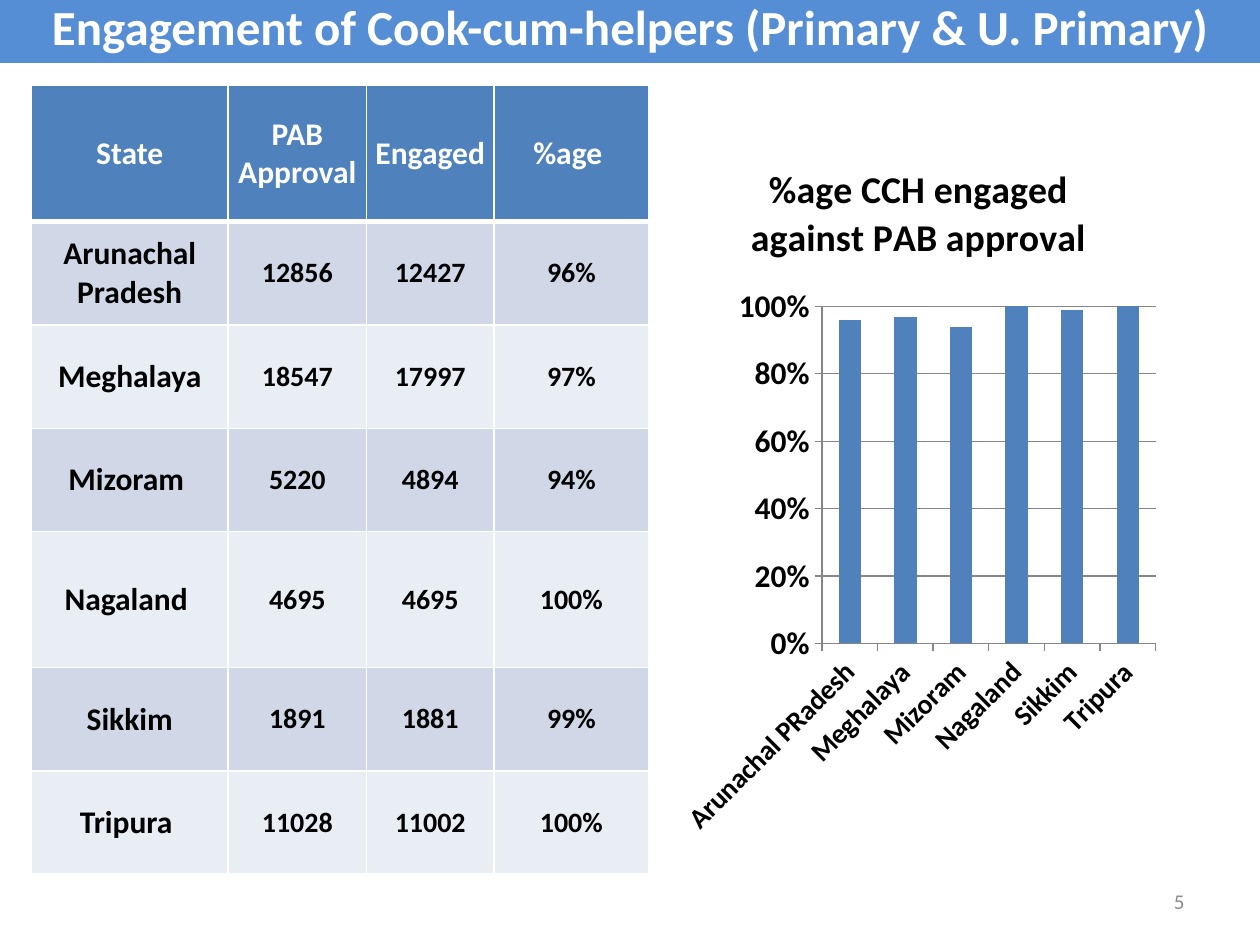
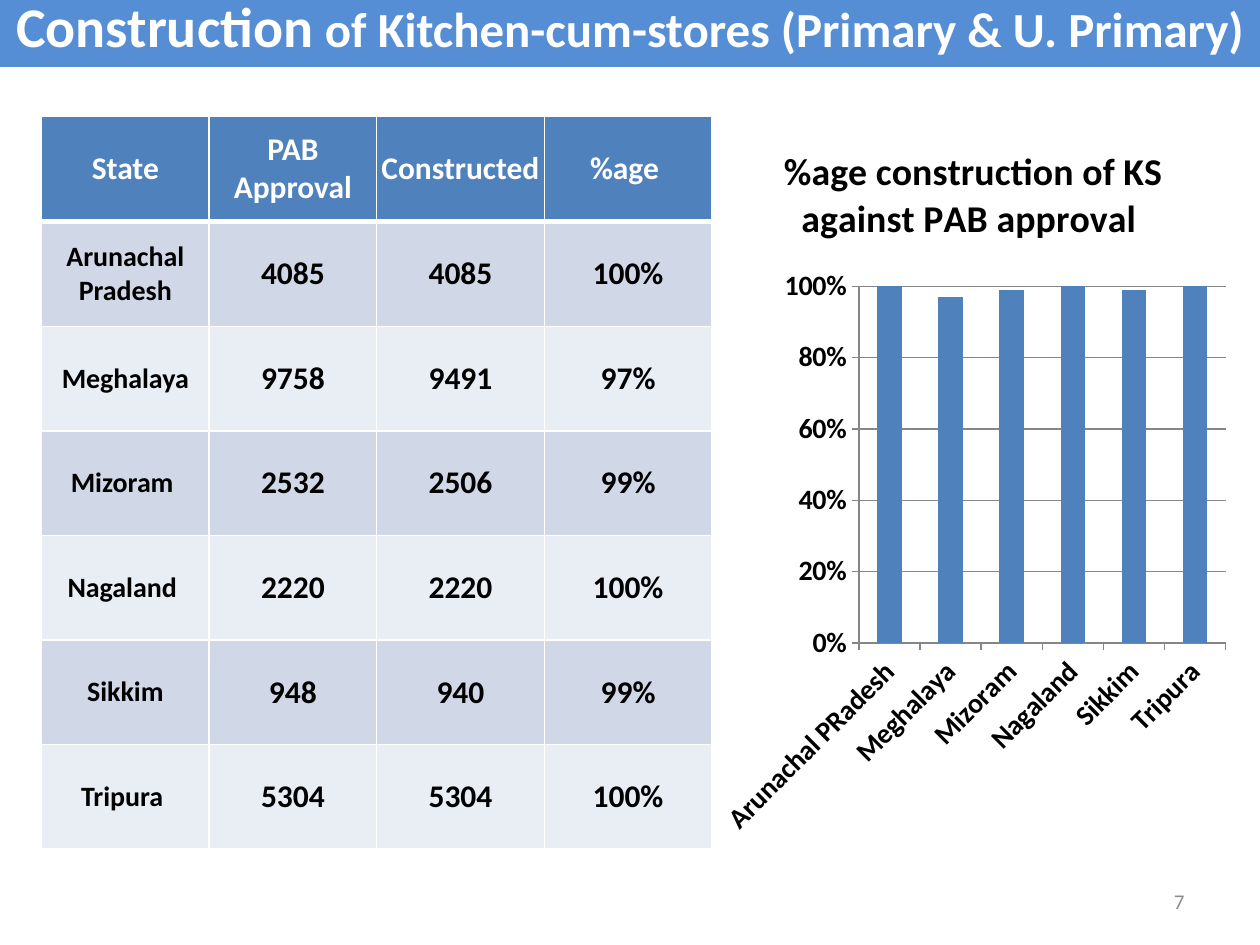
from dataclasses import dataclass

from lxml.etree import SubElement
from pptx import Presentation
from pptx.chart.data import CategoryChartData
from pptx.dml.color import RGBColor
from pptx.enum.chart import XL_CHART_TYPE as ChartType, XL_TICK_MARK as TickMark
from pptx.enum.shapes import MSO_SHAPE as Shape
from pptx.enum.text import MSO_ANCHOR as Anchor, MSO_AUTO_SIZE as AutoSize, PP_ALIGN as Align
from pptx.oxml.ns import qn
from pptx.util import Inches, Pt


@dataclass(frozen=True)
class Theme:
    font: str = "Calibri"
    band: str = "558ED5"
    accent: str = "4F81BD"
    row_fills: tuple = ("D0D8E8", "E9EDF4")
    white: str = "FFFFFF"
    black: str = "000000"
    grid: str = "868686"
    muted: str = "8C8C8C"
    big_title: float = 32
    title: float = 28
    chart_title: float = 21.6
    large: float = 18
    medium: float = 16
    page: float = 12


THEME = Theme()
STATES = ["Arunachal Pradesh", "Meghalaya", "Mizoram ", "Nagaland ", "Sikkim", "Tripura "]
CHART_STATES = ["Arunachal PRadesh"] + [state.strip() for state in STATES[1:]]


def rgb(color):
    return RGBColor.from_string(color)


def write(frame, text, size=THEME.large, color=THEME.black, bold=True,
          align=Align.CENTER, spacing=None):
    """Fill the first paragraph; text is a string or a list of (text, size) runs."""
    paragraph = frame.paragraphs[0]
    paragraph.alignment = align
    if spacing:
        paragraph.line_spacing = spacing
    for words, points in [(text, size)] if isinstance(text, str) else text:
        run = paragraph.add_run()
        run.text = words
        style_font(run.font, points, color, bold)


def style_font(font, size, color=THEME.black, bold=True):
    font.name, font.size, font.bold = THEME.font, Pt(size), bold
    font.color.rgb = rgb(color)


def add_title_band(slide, runs, top, height):
    band = slide.shapes.add_shape(Shape.RECTANGLE, 0, Inches(top), Inches(10), Inches(height))
    band.shadow.inherit = False
    band.fill.solid()
    band.fill.fore_color.rgb = rgb(THEME.band)
    band.line.fill.background()
    frame = band.text_frame
    frame.word_wrap = True
    frame.auto_size = AutoSize.SHAPE_TO_FIT_TEXT
    frame.vertical_anchor = Anchor.MIDDLE
    write(frame, runs, color=THEME.white, spacing=0.9)


def set_borders(cell, bottom):
    properties = cell._tc.get_or_add_tcPr()
    for side, points in (("L", 1), ("R", 1), ("T", 1), ("B", bottom)):
        line = SubElement(properties, qn(f"a:ln{side}"), w=str(Pt(points)))
        SubElement(SubElement(line, qn("a:solidFill")), qn("a:srgbClr"), val=THEME.white)


def fill_cell(cell, text, fill, size, color=THEME.black, bottom=1):
    cell.margin_left = cell.margin_right = cell.margin_top = cell.margin_bottom = 0
    cell.vertical_anchor = Anchor.MIDDLE
    set_borders(cell, bottom)
    cell.fill.solid()
    cell.fill.fore_color.rgb = rgb(fill)
    write(cell.text_frame, text, size, color)


def add_state_table(slide, left, top, widths, heights, done_label, counts, shares,
                    state_size, number_size):
    table = slide.shapes.add_table(
        len(heights), len(widths), Inches(left), Inches(top),
        Inches(sum(widths)), Inches(sum(heights))).table
    for column, width in zip(table.columns, widths):
        column.width = Inches(width)
    for row, height in zip(table.rows, heights):
        row.height = Inches(height)

    for col, heading in enumerate(("State", "PAB Approval", done_label, "%age ")):
        fill_cell(table.cell(0, col), heading, THEME.accent, THEME.large, THEME.white, bottom=3)
    for row, (state, (approved, done), share) in enumerate(zip(STATES, counts, shares), 1):
        values = (state, str(approved), str(done), f"{share:.0%}")
        for col, value in enumerate(values):
            size = number_size if col else state_size
            fill_cell(table.cell(row, col), value, THEME.row_fills[(row - 1) % 2], size)


def style_axis(axis, size):
    axis.major_tick_mark = TickMark.OUTSIDE
    axis.minor_tick_mark = TickMark.NONE
    axis.format.line.color.rgb = rgb(THEME.grid)
    style_font(axis.tick_labels.font, size)


def add_share_chart(slide, left, top, width, height, title, shares, value_size):
    data = CategoryChartData(number_format="0%")
    data.categories = CHART_STATES
    data.add_series("Series 1", shares)
    chart = slide.shapes.add_chart(
        ChartType.COLUMN_CLUSTERED, Inches(left), Inches(top),
        Inches(width), Inches(height), data).chart
    style_font(chart.font, THEME.large, bold=False)
    chart.has_legend = False
    chart.has_title = True
    write(chart.chart_title.text_frame, title, THEME.chart_title)

    plot = chart.plots[0]
    plot.gap_width = 150
    plot.vary_by_categories = False
    columns = plot.series[0]
    columns.invert_if_negative = False
    columns.format.fill.solid()
    columns.format.fill.fore_color.rgb = rgb(THEME.accent)

    states = chart.category_axis
    style_axis(states, THEME.medium)
    states._element.txPr.find(qn("a:bodyPr")).set("rot", "-2700000")
    scale = chart.value_axis
    style_axis(scale, value_size)
    scale.minimum_scale, scale.maximum_scale, scale.major_unit = 0, 1, 0.2
    scale.has_major_gridlines = True
    scale.major_gridlines.format.line.color.rgb = rgb(THEME.grid)
    scale.tick_labels.number_format = "0%"
    scale.tick_labels.number_format_is_linked = False


def add_page_number(slide, number):
    frame = slide.shapes.add_textbox(
        Inches(7.17), Inches(6.95), Inches(2.33), Inches(0.4)).text_frame
    frame.word_wrap = True
    frame.vertical_anchor = Anchor.MIDDLE
    write(frame, str(number), THEME.page, THEME.muted, bold=False, align=Align.RIGHT)


def add_helpers_slide(slide):
    shares = (0.96, 0.97, 0.94, 1, 0.99, 1)
    counts = ((12856, 12427), (18547, 17997), (5220, 4894),
              (4695, 4695), (1891, 1881), (11028, 11002))
    add_title_band(
        slide, [("Engagement of Cook-cum-helpers (Primary & U. Primary)", THEME.title)],
        top=-0.03, height=0.53)
    add_state_table(
        slide, 0.25, 0.68, widths=(1.56, 1.1, 1.01, 1.23),
        heights=(1.08, 0.82, 0.82, 0.82, 1.08, 0.82, 0.82), done_label="Engaged",
        counts=counts, shares=shares, state_size=THEME.large, number_size=THEME.medium)
    add_share_chart(slide, 5.33, 1.07, 3.92, 5.68, "%age CCH engaged against PAB approval",
                    shares, value_size=THEME.large)
    add_page_number(slide, 5)


def add_kitchens_slide(slide):
    shares = (1, 0.97, 0.99, 1, 0.99, 1)
    counts = ((4085, 4085), (9758, 9491), (2532, 2506),
              (2220, 2220), (948, 940), (5304, 5304))
    add_title_band(
        slide, [("Construction", THEME.big_title),
                (" of Kitchen-cum-stores (Primary & U. Primary)", THEME.title)],
        top=-0.06, height=0.59)
    add_state_table(
        slide, 0.33, 0.92, widths=(1.33,) * 4, heights=(0.84,) + (0.83,) * 6,
        done_label="Constructed", counts=counts, shares=shares,
        state_size=THEME.medium, number_size=THEME.large)
    add_share_chart(slide, 5.64, 0.92, 4.17, 5.83,
                    "%age construction of KS against PAB approval ",
                    shares, value_size=THEME.medium)
    add_page_number(slide, 7)


def main():
    deck = Presentation()
    deck.slide_width, deck.slide_height = Inches(10), Inches(7.5)
    blank = deck.slide_layouts[6]
    for build in (add_helpers_slide, add_kitchens_slide):
        build(deck.slides.add_slide(blank))
    deck.save("out.pptx")


if __name__ == "__main__":
    main()
